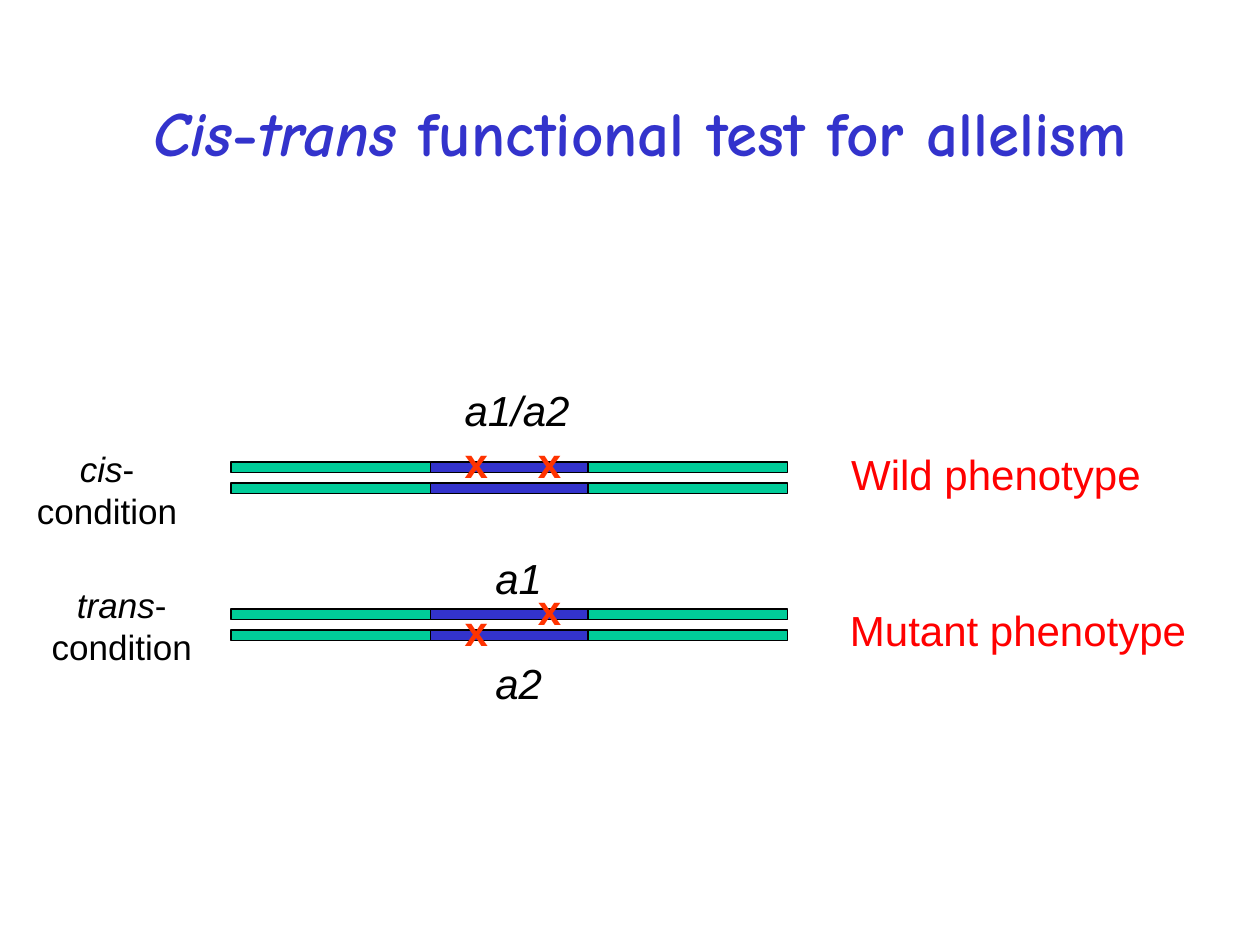
from pptx import Presentation
from pptx.dml.color import RGBColor
from pptx.enum.shapes import MSO_SHAPE as Shape
from pptx.enum.text import MSO_ANCHOR as Anchor, MSO_AUTO_SIZE as AutoSize, PP_ALIGN as Align
from pptx.util import Inches, Pt

presentation = Presentation()
presentation.slide_width, presentation.slide_height = Inches(10), Inches(7.5)
slide = presentation.slides.add_slide(presentation.slide_layouts[5])

# Grid of 120 columns by 90 rows
CELL = presentation.slide_width / 120
BLUE, GREEN, BLACK, RED, ORANGE = "3333CC", "00CC99", "000000", "FF0000", "FF3300"


def set_color(color_format, value):
    color_format.rgb = RGBColor.from_string(value)


def write(shape, lines, color, size=24, font="Arial", bold=False, wrap=False):
    """Fill a shape with centred lines, each a list of (text, italic) runs."""
    frame = shape.text_frame
    frame.word_wrap = wrap
    for index, runs in enumerate(lines):
        paragraph = frame.add_paragraph() if index else frame.paragraphs[0]
        paragraph.alignment = Align.CENTER
        for text, italic in runs:
            run = paragraph.add_run()
            run.text = text
            values = {"name": font, "size": Pt(size), "bold": bold, "italic": italic}
            for name, value in values.items():
                setattr(run.font, name, value)
            set_color(run.font.color, color)


# Title
title = slide.shapes.title
box = {"left": 0.33, "top": 0.5, "width": 9.5, "height": 1.08}
for name, value in box.items():
    setattr(title, name, Inches(value))
title.text_frame.vertical_anchor = Anchor.MIDDLE
title.text_frame.auto_size = AutoSize.NONE
title_runs = [("Cis", True), ("-", False), ("trans", True),
              (" functional test for allelism", False)]
write(title, [title_runs], BLUE, size=36, font="Comic Neue", bold=True, wrap=True)

# Chromosome pairs: green arms on both sides of the blue gene
for row in (44, 46, 58, 60):
    for column, width, color in ((22, 19, GREEN), (56, 19, GREEN), (41, 15, BLUE)):
        segment = slide.shapes.add_shape(
            Shape.RECTANGLE, *(int(n * CELL) for n in (column, row, width, 1)))
        segment.shadow.inherit = False
        segment.fill.solid()
        set_color(segment.fill.fore_color, color)
        set_color(segment.line.color, BLACK)
        segment.line.width = Pt(0.75)

# Labels: column, row, width, height, lines, format
plain, marker = {"color": BLACK}, {"color": ORANGE, "bold": True, "wrap": True}
phenotype, condition = {"color": RED}, {"color": BLACK, "size": 20}
labels = [
    (43, 36, 12.5, 6, [[("a1/a2", True)]], plain),
    (45.9, 52, 7, 6, [[("a1", True)]], plain),
    (45.9, 62, 7, 6, [[("a2", True)]], plain),
    (79.8, 42.1, 30.1, 6, [[("Wild phenotype", False)]], phenotype),
    (79.7, 57, 34.5, 6, [[("Mutant phenotype", False)]], phenotype),
]
# Mutation sites
for column, row in ((43, 41), (50, 41), (50, 55), (43, 57)):
    labels.append((column, row, 4.7, 6, [[("x", False)]], marker))
# Names of the two conditions
for column, row, name in ((2.2, 42, "cis"), (3.6, 55, "trans")):
    lines = [[(name, True), ("-", False)], [("condition", False)]]
    labels.append((column, row, 16, 9.2, lines, condition))

for *place, lines, values in labels:
    label = slide.shapes.add_textbox(*(int(n * CELL) for n in place))
    label.text_frame.auto_size = AutoSize.SHAPE_TO_FIT_TEXT
    write(label, lines, **values)

presentation.save("out.pptx")
